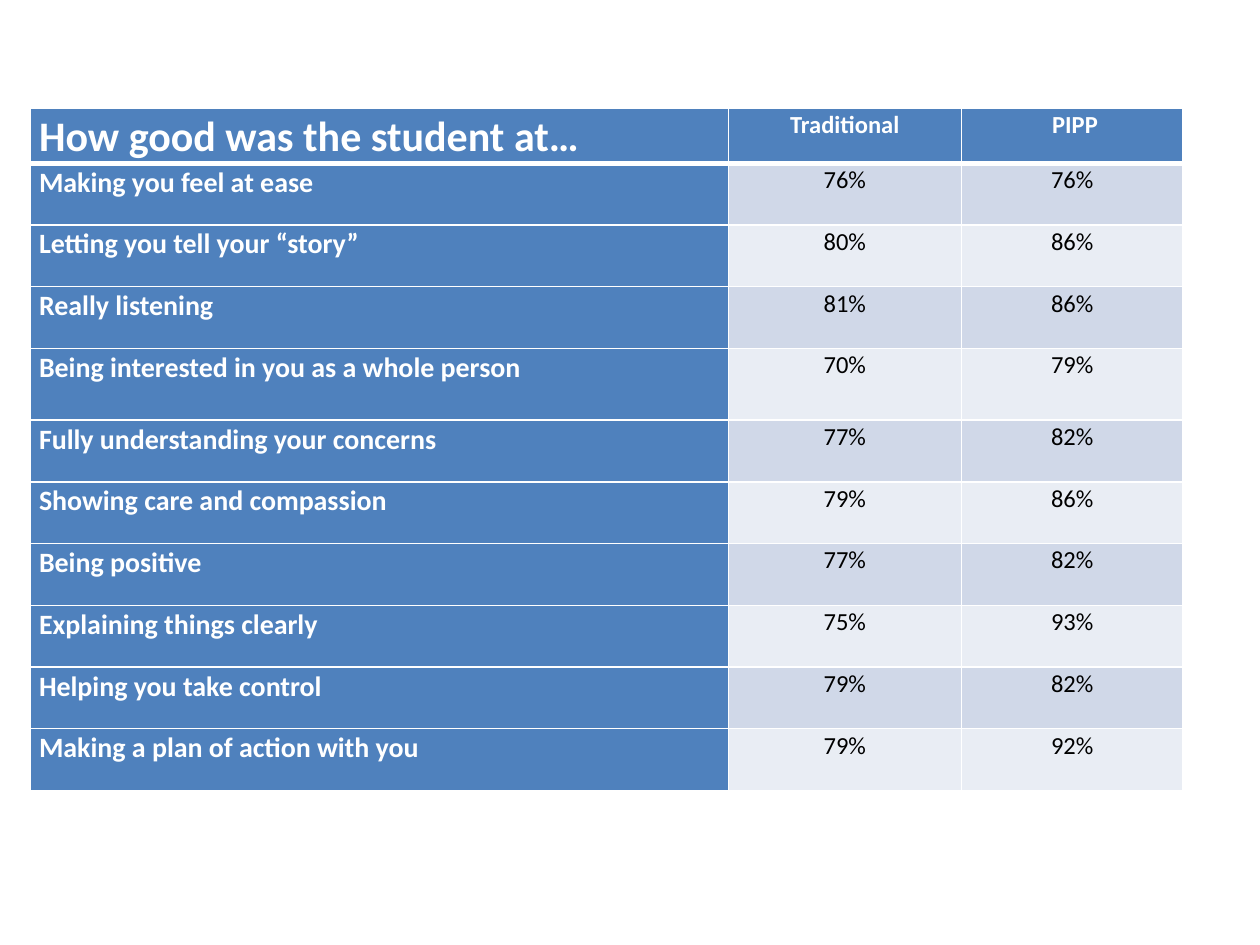
from dataclasses import dataclass

from lxml import etree
from pptx import Presentation
from pptx.dml.color import RGBColor as RGB
from pptx.enum.text import PP_ALIGN as Align
from pptx.oxml.ns import qn
from pptx.util import Inches, Pt


@dataclass(frozen=True)
class Theme:
    font: str = "Calibri"
    accent: str = "4F81BD"
    bands: tuple = ("D0D8E8", "E9EDF4")
    light: str = "FFFFFF"
    dark: str = "000000"
    title_size: int = 24
    label_size: int = 16
    value_size: int = 14
    thin_rule: int = 1
    header_rule: int = 3


THEME = Theme()

# Table grid, in inches
LEFT, TOP = 0.24, 0.86
COLUMN_WIDTHS = (5.54, 1.85, 1.76)
HEADER_HEIGHT, ROW_HEIGHT, TALL_HEIGHT = 0.43, 0.49, 0.57
TALL_ROW = 4

HEADER = ("How good was the student at…", "Traditional", " PIPP")
RATINGS = (
    ("Making you feel at ease", 76, 76),
    ("Letting you tell your “story”", 80, 86),
    ("Really listening", 81, 86),
    ("Being interested in you as a whole person", 70, 79),
    ("Fully understanding your concerns", 77, 82),
    ("Showing care and compassion", 79, 86),
    ("Being positive", 77, 82),
    ("Explaining things clearly", 75, 93),
    ("Helping you take control", 79, 82),
    ("Making a plan of action with you", 79, 92),
)


def set_borders(cell, top, bottom):
    """Draw the four cell borders; they must come before the fill."""
    properties = cell._tc.get_or_add_tcPr()
    widths = {"lnL": THEME.thin_rule, "lnR": THEME.thin_rule, "lnT": top, "lnB": bottom}
    for index, (side, width) in enumerate(widths.items()):
        line = etree.Element(qn(f"a:{side}"), w=str(Pt(width)))
        fill = etree.SubElement(line, qn("a:solidFill"))
        etree.SubElement(fill, qn("a:srgbClr"), val=THEME.light)
        properties.insert(index, line)


def fill_cell(cell, text, size, fill, color, bold, align):
    cell.fill.solid()
    cell.fill.fore_color.rgb = RGB.from_string(fill)
    cell.margin_left = cell.margin_right = Inches(0.07)
    cell.margin_top = cell.margin_bottom = 0
    cell.text = text
    paragraph = cell.text_frame.paragraphs[0]
    paragraph.alignment = align
    paragraph.line_spacing = 1.07
    font = paragraph.font
    font.name, font.size, font.bold = THEME.font, Pt(size), bold
    font.color.rgb = RGB.from_string(color)


def fill_row(table, row, texts):
    is_header = row == 0
    top = THEME.header_rule if row == 1 else THEME.thin_rule
    bottom = THEME.header_rule if is_header else THEME.thin_rule
    for column, text in enumerate(texts):
        is_label = column == 0
        strong = is_header or is_label
        label_size = THEME.title_size if is_header else THEME.label_size
        cell = table.cell(row, column)
        fill_cell(
            cell,
            text,
            size=label_size if is_label else THEME.value_size,
            fill=THEME.accent if strong else THEME.bands[(row - 1) % 2],
            color=THEME.light if strong else THEME.dark,
            bold=strong,
            align=Align.LEFT if is_label else Align.CENTER,
        )
        set_borders(cell, top, bottom)


def add_ratings_table(slide):
    heights = [HEADER_HEIGHT] + [ROW_HEIGHT] * len(RATINGS)
    heights[TALL_ROW] = TALL_HEIGHT
    table = slide.shapes.add_table(
        len(heights), len(COLUMN_WIDTHS), Inches(LEFT), Inches(TOP),
        Inches(sum(COLUMN_WIDTHS)), Inches(sum(heights)),
    ).table
    for column, width in zip(table.columns, COLUMN_WIDTHS):
        column.width = Inches(width)
    for row, height in zip(table.rows, heights):
        row.height = Inches(height)

    # Header, then one row per question
    fill_row(table, 0, HEADER)
    for row, (question, *scores) in enumerate(RATINGS, start=1):
        fill_row(table, row, [question] + [f"{score}%" for score in scores])


def main():
    presentation = Presentation()
    presentation.slide_width, presentation.slide_height = Inches(10), Inches(7.5)
    slide = presentation.slides.add_slide(presentation.slide_layouts[6])
    add_ratings_table(slide)
    presentation.save("out.pptx")


if __name__ == "__main__":
    main()
